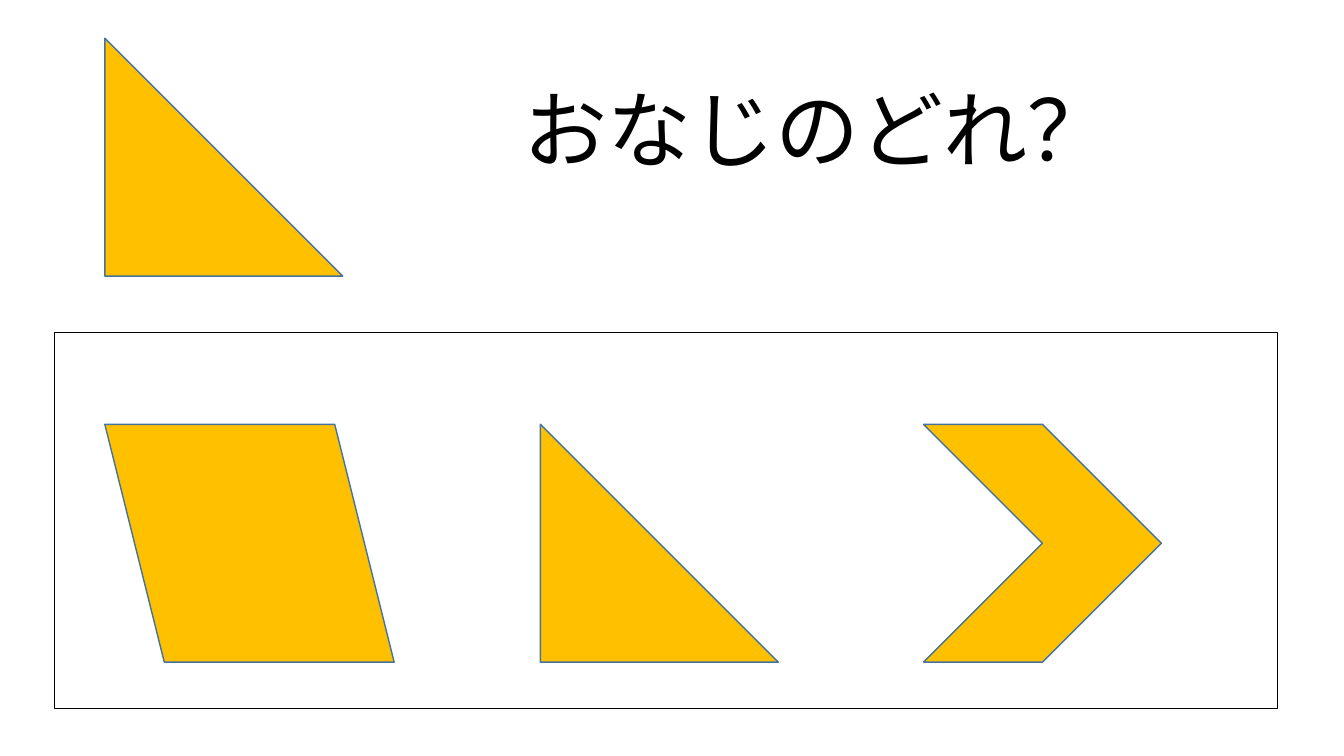
from lxml.etree import SubElement
from pptx import Presentation
from pptx.dml.color import RGBColor
from pptx.enum.shapes import MSO_SHAPE as Shape
from pptx.enum.text import MSO_ANCHOR as Anchor, MSO_AUTO_SIZE as AutoSize, PP_ALIGN as Align
from pptx.oxml.ns import qn
from pptx.util import Inches, Pt

COLORS = {"gold": "FFC000", "outline": "43739E", "black": "000000"}
FONT = "Noto Sans CJK JP"


def write_text(frame, text, size, color, font=FONT, align=Align.CENTER,
               anchor=Anchor.BOTTOM, spacing=0.9):
    frame.word_wrap = True
    frame.auto_size = AutoSize.NONE
    frame.vertical_anchor = anchor
    para = frame.paragraphs[0]
    para.alignment = align
    para.line_spacing = spacing
    span = para.add_run()
    span.text = text
    span.font.size = Pt(size)
    span.font.name = font
    span.font.color.rgb = RGBColor.from_string(COLORS[color])
    # Japanese glyphs take the East Asian typeface
    SubElement(span.font._element, qn("a:ea"), typeface=font)


class PuzzleSlide:
    def __init__(self, deck):
        self.page = deck.slides.add_slide(deck.slide_layouts[5])

    def title(self, text, left, top, width, height):
        box = self.page.shapes.title
        box.left, box.top = Inches(left), Inches(top)
        box.width, box.height = Inches(width), Inches(height)
        write_text(box.text_frame, text, size=60, color="black")

    def figure(self, kind, left, top, width, height,
               fill="gold", line="outline", mirrored=False):
        shape = self.page.shapes.add_shape(
            kind, Inches(left), Inches(top), Inches(width), Inches(height))
        shape.shadow.inherit = False
        if fill:
            shape.fill.solid()
            shape.fill.fore_color.rgb = RGBColor.from_string(COLORS[fill])
        else:
            shape.fill.background()
        shape.line.color.rgb = RGBColor.from_string(COLORS[line])
        shape.line.width = Pt(1)
        if mirrored:
            shape.element.spPr.xfrm.set("flipH", "1")


def main():
    deck = Presentation()
    deck.slide_width, deck.slide_height = Inches(13.33), Inches(7.5)
    puzzle = PuzzleSlide(deck)

    side, choice_top = 2.36, 4.21
    puzzle.figure(Shape.RIGHT_TRIANGLE, 1.04, 0.38, side, side)
    puzzle.title("おなじのどれ？", 3.11, 0.65, 10, 1.18)

    choices = [
        (Shape.PARALLELOGRAM, 1.04, 2.87, True),
        (Shape.RIGHT_TRIANGLE, 5.36, side, False),
        (Shape.CHEVRON, 9.16, side, False),
    ]
    for kind, left, width, mirrored in choices:
        puzzle.figure(kind, left, choice_top, width, side, mirrored=mirrored)
    puzzle.figure(Shape.RECTANGLE, 0.54, 3.3, 12.13, 3.73, fill=None, line="black")

    deck.save("out.pptx")


if __name__ == "__main__":
    main()
